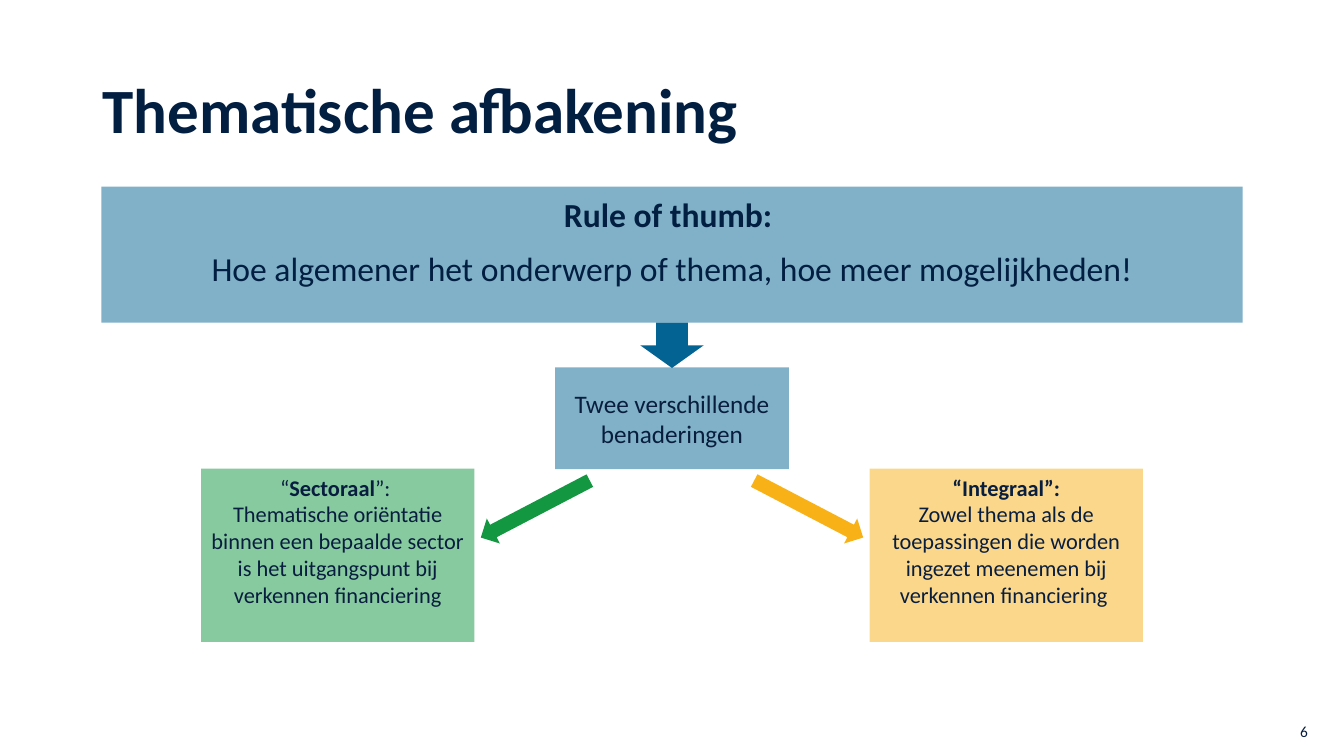
from lxml.etree import SubElement
from pptx import Presentation
from pptx.dml.color import RGBColor
from pptx.enum.shapes import MSO_SHAPE
from pptx.enum.text import MSO_ANCHOR, PP_ALIGN
from pptx.oxml.ns import qn
from pptx.util import Inches, Pt

NAVY, INK, BLUE, GREEN, AMBER = "021E41", "091E3F", "036493", "139741", "F9B118"


def rgb(value):
    """Turn a hex string into a colour."""
    return RGBColor.from_string(value)


class SlideBuilder:
    """Draws on one slide, with places and sizes in percent of the slide."""

    font = "Calibri"

    def __init__(self, prs):
        """Add a blank slide."""
        self.width, self.height = prs.slide_width, prs.slide_height
        self.s = prs.slides.add_slide(prs.slide_layouts[6])

    def place(self, left, top, width, height):
        """Convert percentages to slide lengths."""
        return (int(self.width * left / 100), int(self.height * top / 100),
                int(self.width * width / 100), int(self.height * height / 100))

    def add_text(self, sp, paragraphs, size, color, align, anchor, gap=0, line=None):
        """Fill a shape with paragraphs of (text, bold) runs."""
        tf = sp.text_frame
        tf.word_wrap = True
        tf.vertical_anchor = anchor
        for i, runs in enumerate(paragraphs):
            p = tf.add_paragraph() if i else tf.paragraphs[0]
            p.alignment = align
            p.line_spacing = line
            if i:
                p.space_before = Pt(gap)
            for text, bold in runs:
                r = p.add_run()
                r.text = text
                r.font.name, r.font.size, r.font.bold = self.font, Pt(size), bold
                r.font.color.rgb = rgb(color)

    def text(self, box, runs, size, color, anchor, line=None):
        """Add a left-aligned text box."""
        sp = self.s.shapes.add_textbox(*self.place(*box))
        self.add_text(sp, [runs], size, color, PP_ALIGN.LEFT, anchor, line=line)

    def shape(self, kind, center, top, width, height, color, opacity=100, angle=0):
        """Add a borderless shape centred on a horizontal position."""
        box = self.place(center - width / 2, top, width, height)
        sp = self.s.shapes.add_shape(kind, *box)
        sp.shadow.inherit = False
        sp.fill.solid()
        sp.fill.fore_color.rgb = rgb(color)
        sp.line.fill.background()
        sp.rotation = angle
        if opacity < 100:
            clr = sp._element.spPr.find(qn("a:solidFill")).find(qn("a:srgbClr"))
            SubElement(clr, qn("a:alpha"), val=str(opacity * 1000))
        return sp

    def panel(self, center, top, width, height, color, paragraphs, size,
              ink=INK, anchor=MSO_ANCHOR.TOP, gap=0):
        """Add a half-transparent box with centred text."""
        sp = self.shape(MSO_SHAPE.RECTANGLE, center, top, width, height, color, 50)
        self.add_text(sp, paragraphs, size, ink, PP_ALIGN.CENTER, anchor, gap)
        return sp


def main():
    """Build the slide and save it."""
    prs = Presentation()
    prs.slide_width, prs.slide_height = Inches(13.33), Inches(7.5)
    slide = SlideBuilder(prs)

    slide.text((96, 94.8, 4, 3.87), [("6", False)], 11, INK, MSO_ANCHOR.TOP)
    slide.text((6.9, 5.33, 86.27, 19.33), [("Thematische afbakening", True)],
               45, NAVY, MSO_ANCHOR.MIDDLE, 0.9)

    rule = slide.panel(50, 24.67, 84.92, 18, BLUE, [
        [("Rule of thumb: ", True)],
        [("Hoe algemener het onderwerp of thema, hoe meer mogelijkheden!", False)],
    ], 24, NAVY, gap=10)
    rule.text_frame.margin_top = Inches(0.07)
    slide.shape(MSO_SHAPE.DOWN_ARROW, 50, 42.67, 4.73, 6, BLUE)
    slide.panel(50, 48.6, 17.4, 13.47, BLUE,
                [[("Twee verschillende benaderingen", False)]], 18,
                anchor=MSO_ANCHOR.MIDDLE)

    approaches = [
        (-1, GREEN, 152.4, [("“", False), ("Sectoraal", True), ("”: ", False)],
         "Thematische oriëntatie binnen een bepaalde sector is het uitgangspunt "
         "bij verkennen financiering"),
        (1, AMBER, 27.6, [("“Integraal”:", True)],
         "Zowel thema als de toepassingen die worden ingezet meenemen "
         "bij verkennen financiering "),
    ]
    for side, color, angle, heading, body in approaches:
        slide.shape(MSO_SHAPE.RIGHT_ARROW, 50 + side * 10.17, 65.47, 9.15, 3.73,
                    color, angle=angle)
        slide.panel(50 + side * 24.87, 62, 20.33, 22.93, color,
                    [heading, [(body, False)]], 16)

    prs.save("out.pptx")


if __name__ == "__main__":
    main()
